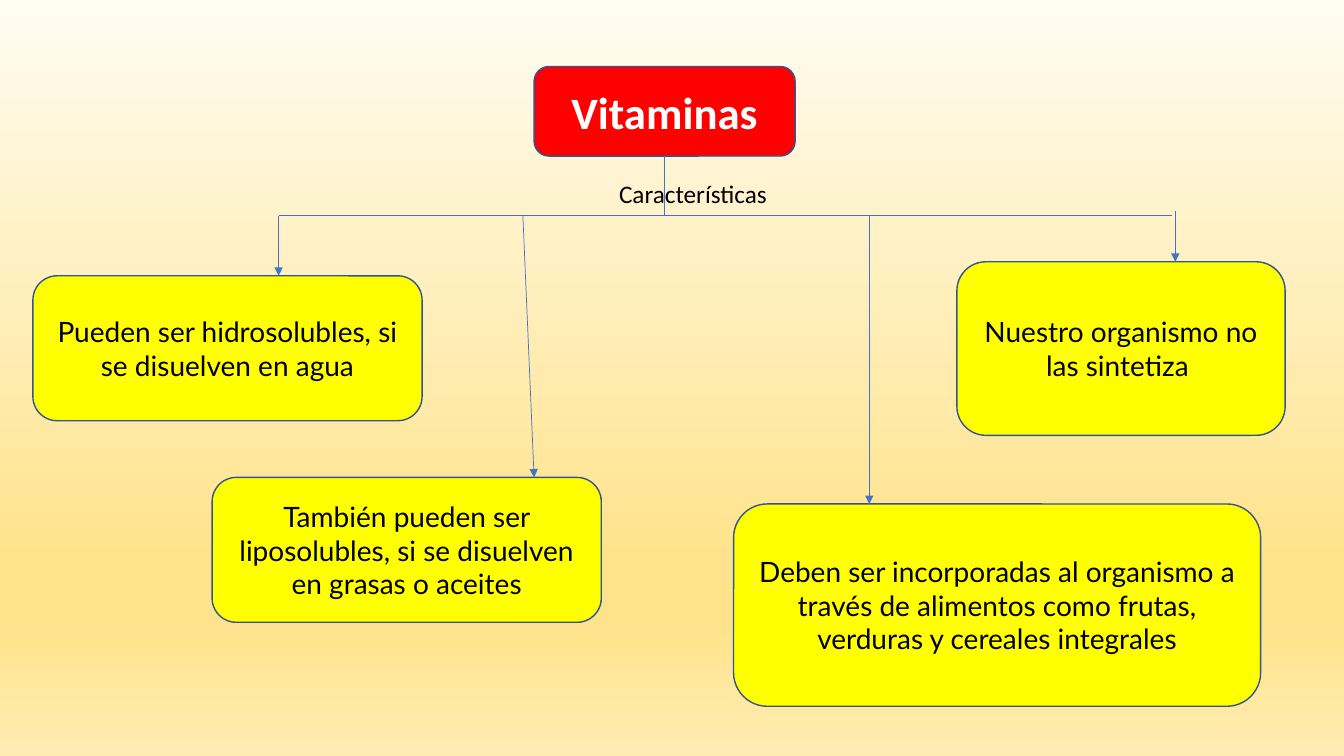
from dataclasses import dataclass

from lxml import etree
from pptx import Presentation
from pptx.dml.color import RGBColor
from pptx.enum.shapes import MSO_CONNECTOR as Connector, MSO_SHAPE as Shape
from pptx.enum.text import MSO_ANCHOR as Anchor, MSO_AUTO_SIZE as AutoSize, PP_ALIGN as Align
from pptx.oxml.ns import qn
from pptx.util import Pt

BOTTOM = 2  # connection site of a rectangle


@dataclass(frozen=True)
class Theme:
    title_fill: str = "FF0000"
    card_fill: str = "FFFF00"
    outline: str = "325491"
    connector: str = "4472C4"
    light: str = "FFFFFF"
    dark: str = "000000"
    background: tuple = ((0, "FFFCF2"), (74, "FFE38C"), (83, "FFE38C"), (100, "FFECB2"))
    heading_font: str = "Calibri"
    card_font: str = "Lato"
    title_size: int = 32
    card_size: int = 20
    label_size: int = 18
    outline_width: float = 1
    connector_width: float = 0.5


def write_text(shape, text, *, font, size, color, bold=False, anchor=Anchor.MIDDLE):
    frame = shape.text_frame
    frame.word_wrap = True
    frame.vertical_anchor = anchor
    paragraph = frame.paragraphs[0]
    paragraph.alignment = Align.CENTER
    run = paragraph.add_run()
    run.text = text
    run.font.name = font
    run.font.size = Pt(size)
    run.font.bold = bold
    run.font.color.rgb = RGBColor.from_string(color)


class ConceptMap:
    def __init__(self, slide, theme):
        self.slide = slide
        self.theme = theme

    def paint_background(self):
        fill = self.slide.background.fill
        fill.gradient()
        fill.gradient_angle = 270  # counter-clockwise, so top to bottom
        stops = self.slide.element.find(".//" + qn("a:gsLst"))
        for stop in list(stops):
            stops.remove(stop)
        for percent, color in self.theme.background:
            stop = etree.SubElement(stops, qn("a:gs"), pos=str(percent * 1000))
            etree.SubElement(stop, qn("a:srgbClr"), val=color)

    def box(self, text, left, top, width, height, fill, **text_format):
        shape = self.slide.shapes.add_shape(
            Shape.ROUNDED_RECTANGLE, Pt(left), Pt(top), Pt(width), Pt(height))
        shape.shadow.inherit = False
        shape.fill.solid()
        shape.fill.fore_color.rgb = RGBColor.from_string(fill)
        shape.line.color.rgb = RGBColor.from_string(self.theme.outline)
        shape.line.width = Pt(self.theme.outline_width)
        write_text(shape, text, **text_format)
        return shape

    def title(self, text, *bounds):
        theme = self.theme
        return self.box(text, *bounds, theme.title_fill, font=theme.heading_font,
                        size=theme.title_size, color=theme.light, bold=True)

    def card(self, text, *bounds):
        theme = self.theme
        return self.box(text, *bounds, theme.card_fill, font=theme.card_font,
                        size=theme.card_size, color=theme.dark)

    def label(self, text, left, top, width, height):
        theme = self.theme
        shape = self.slide.shapes.add_textbox(Pt(left), Pt(top), Pt(width), Pt(height))
        write_text(shape, text, font=theme.heading_font, size=theme.label_size,
                   color=theme.dark, anchor=Anchor.TOP)
        shape.text_frame.auto_size = AutoSize.SHAPE_TO_FIT_TEXT

    def connector(self, start, end, arrow=False):
        line = self.slide.shapes.add_connector(
            Connector.STRAIGHT, *(Pt(length) for length in (*start, *end)))
        line.line.color.rgb = RGBColor.from_string(self.theme.connector)
        line.line.width = Pt(self.theme.connector_width)
        properties = line.element.spPr
        if arrow:
            etree.SubElement(properties.find(qn("a:ln")), qn("a:tailEnd"), type="triangle")
        etree.SubElement(properties, qn("a:effectLst"))
        return line


def main():
    presentation = Presentation()
    presentation.slide_width, presentation.slide_height = Pt(960), Pt(540)
    slide = presentation.slides.add_slide(presentation.slide_layouts[6])
    concept_map = ConceptMap(slide, Theme())
    concept_map.paint_background()

    title = concept_map.title("Vitaminas", 381.5, 47.5, 186.5, 64)
    # Text, card bounds, start and end x of the arrow, start y of the arrow
    bar_y = 154
    characteristics = (
        ("Pueden ser hidrosolubles, si se disuelven en agua",
         (23.5, 197, 278, 103.5), 199, 199, bar_y),
        ("También pueden ser liposolubles, si se disuelven en grasas o aceites",
         (151.5, 341, 278, 103.5), 373.5, 381.5, bar_y),
        ("Nuestro organismo no las sintetiza ",
         (683.5, 187, 234.5, 124), 839.5, 839.5, 150.5),
        ("Deben ser incorporadas al organismo a través de alimentos como frutas, "
         "verduras y cereales integrales",
         (524, 360, 376.5, 144.5), 621, 621, bar_y),
    )
    for text, bounds, start_x, end_x, start_y in characteristics:
        concept_map.card(text, *bounds)
        concept_map.connector((start_x, start_y), (end_x, bounds[1]), arrow=True)

    concept_map.connector((199, bar_y), (837, bar_y))
    stem = concept_map.connector((474.75, 111.5), (474.75, bar_y))
    stem.begin_connect(title, BOTTOM)
    concept_map.label("Características ", 310.5, 124, 373, 29)

    presentation.save("out.pptx")


if __name__ == "__main__":
    main()
